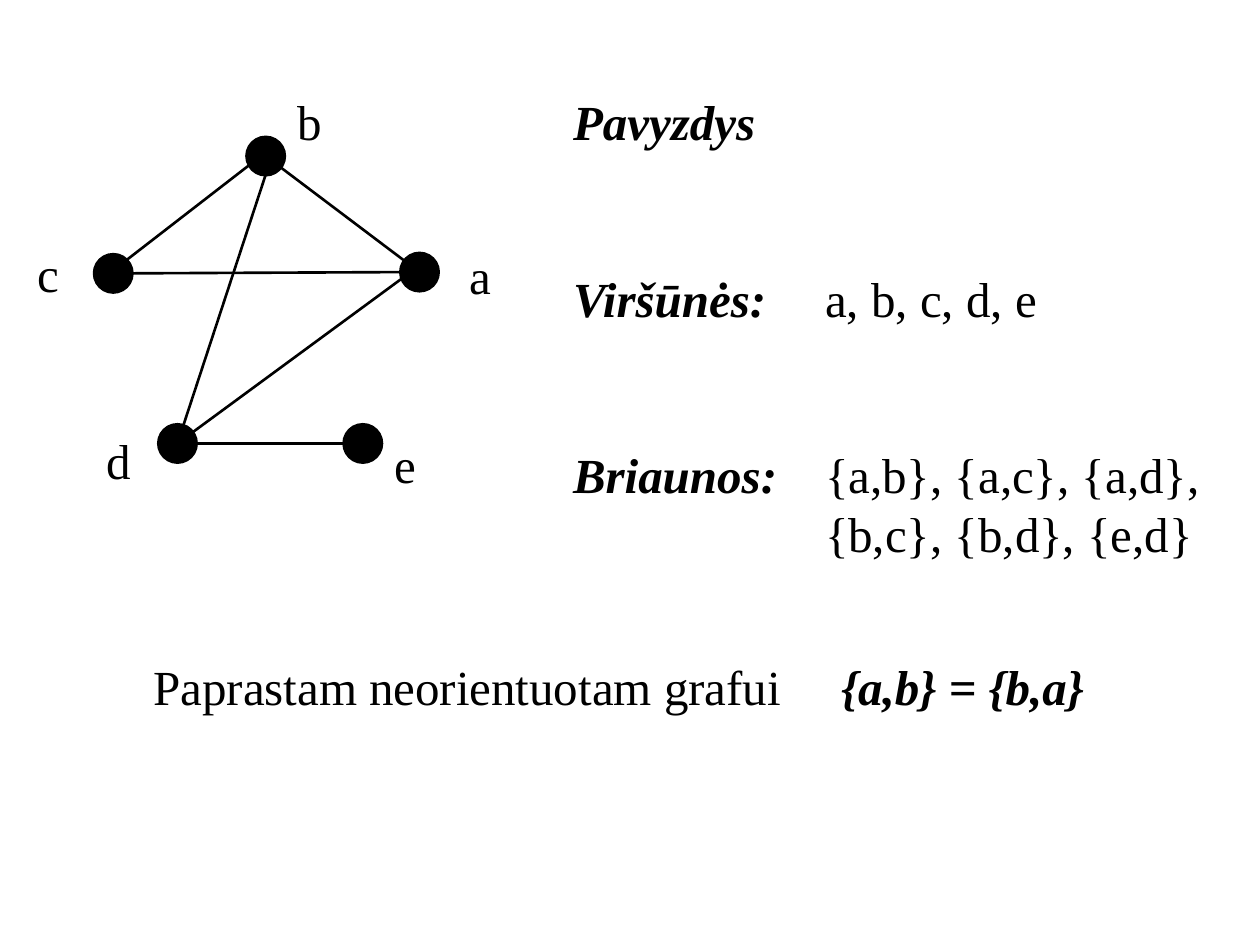
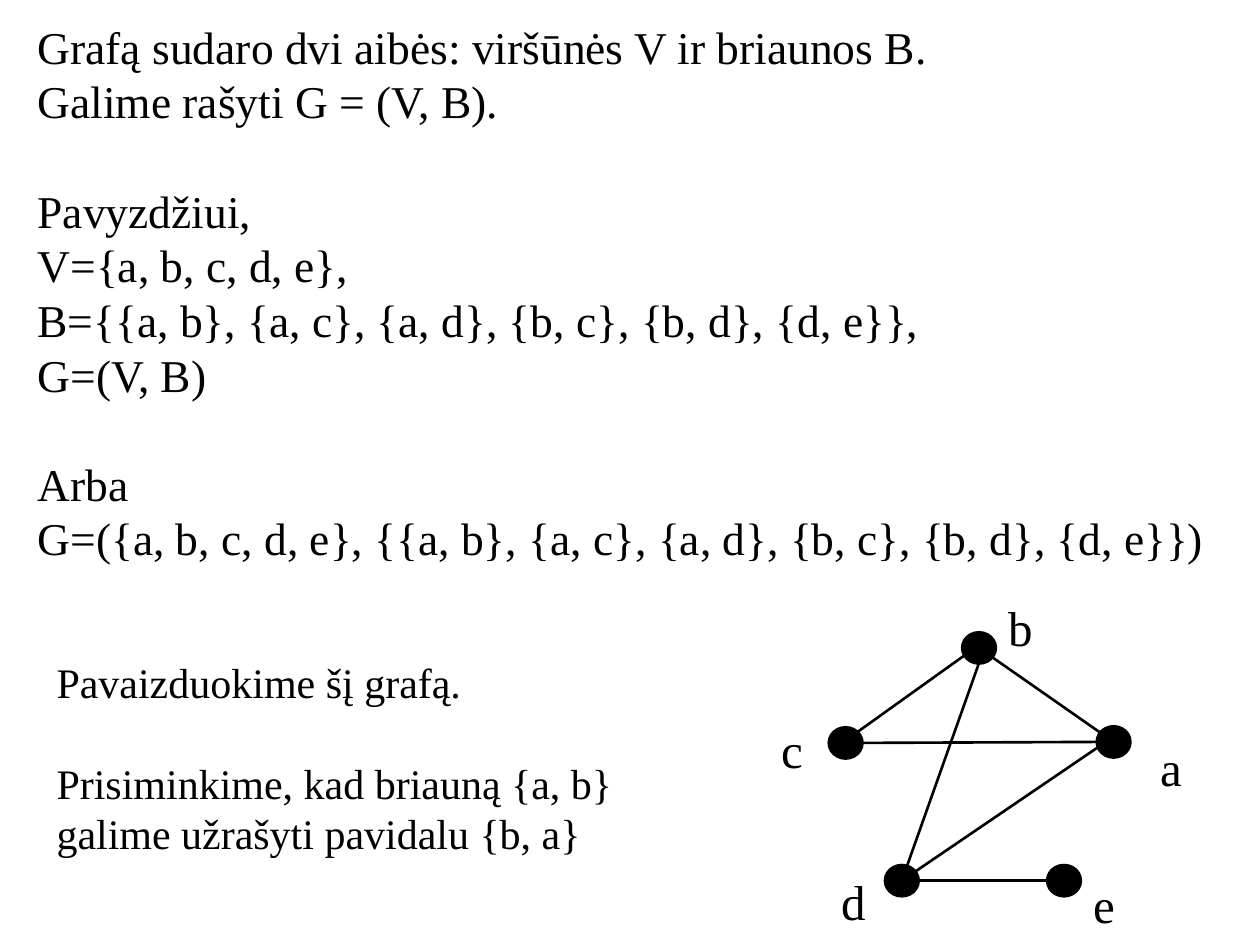
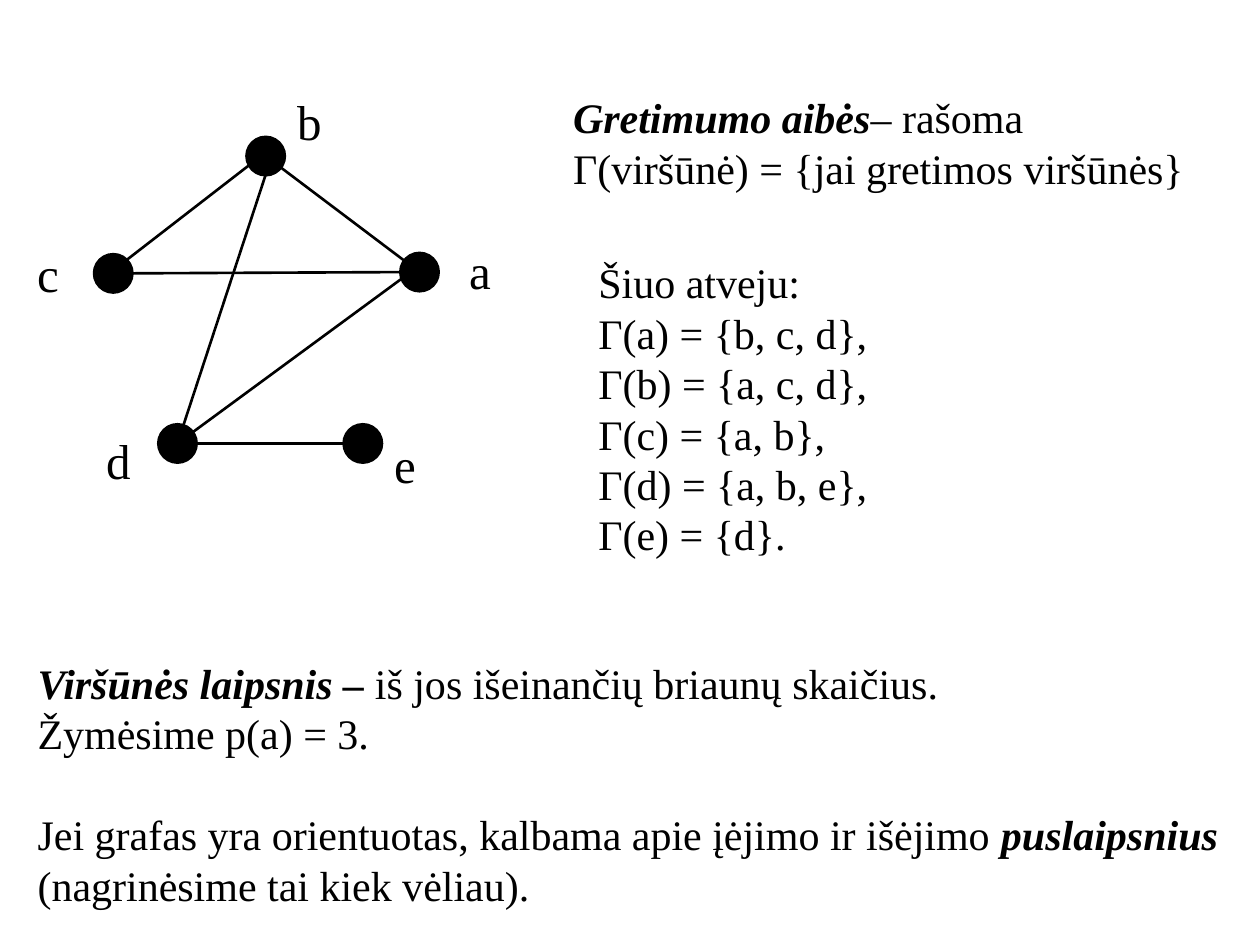
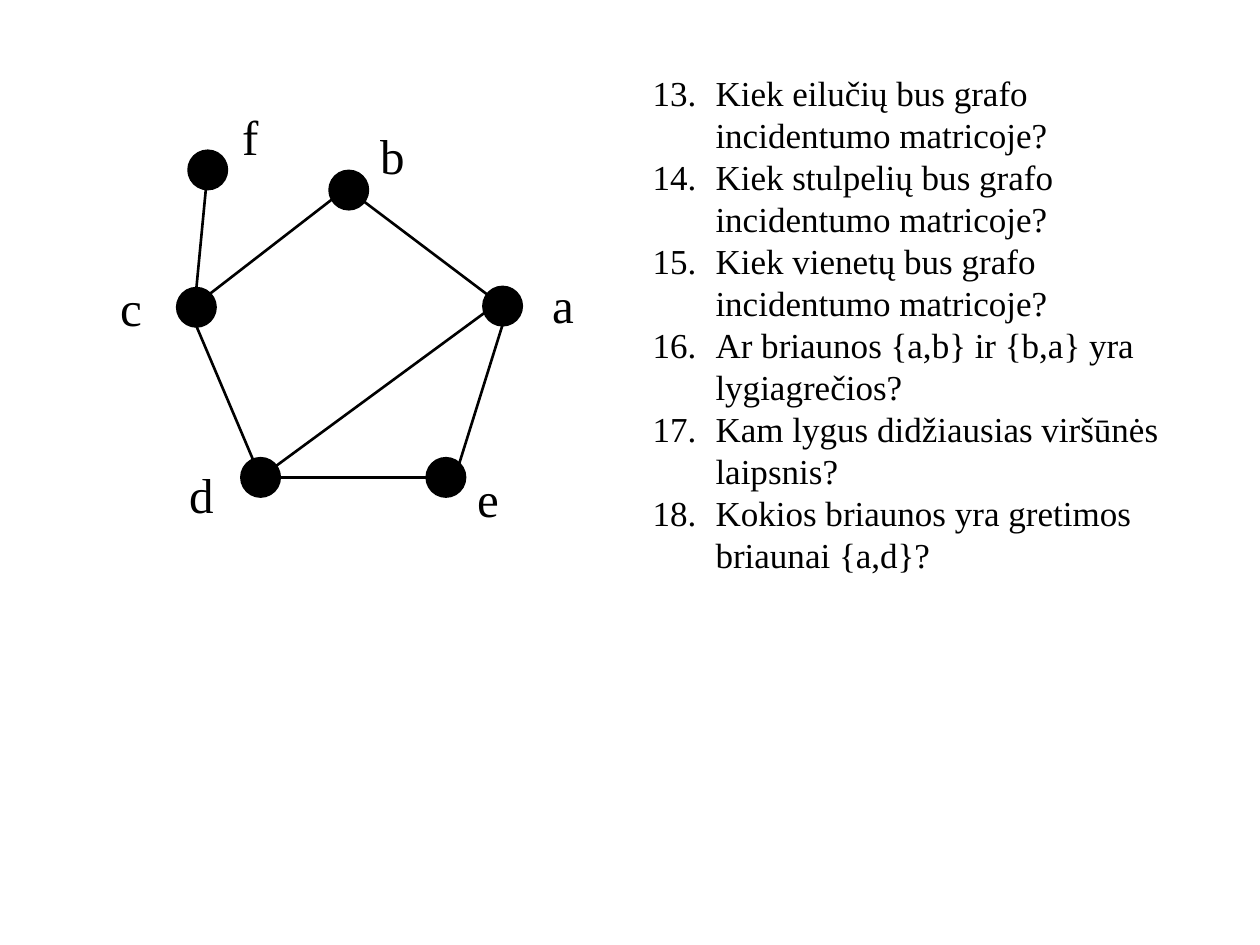
from lxml.etree import SubElement
from pptx import Presentation
from pptx.dml.color import RGBColor
from pptx.enum.shapes import MSO_CONNECTOR as CONN, MSO_SHAPE as SHAPE
from pptx.enum.text import MSO_AUTO_SIZE as FIT
from pptx.oxml.ns import qn
from pptx.util import Pt

BLACK = RGBColor(0x00, 0x00, 0x00)
WHITE = RGBColor(0xFF, 0xFF, 0xFF)
FONT = "Times New Roman"
LINE = 1.2
NODE = 21.4

NODES = {"a": (214.6, 95.8), "b": (126.7, 29.5), "c": (39.6, 96.5),
         "d": (76.3, 193.7), "e": (182.2, 193.7)}
LABELS = {"a": (247, 87.8), "b": (148.3, 0), "c": (0, 86.4),
          "d": (39.6, 193.7), "e": (203.8, 195.8)}
SHARED_EDGES = [("b", 0, 0, "a", 0, 0), ("d", -0.3, 0, "e", -1, 0),
                ("c", 0.7, -0.7, "b", -0.25, 0), ("a", -0.2, -0.2, "d", 0, 0)]
EDGES = SHARED_EDGES + [("c", 1, 0, "a", -1, 0), ("b", 0, 1, "d", 0, 0)]
EDGES_F = SHARED_EDGES + [("e", 0.7, -0.7, "a", 0, 1), ("c", 0, 1, "d", 0, 0),
                          ("f", 0, 0, "c", 0, -1)]


def add_text(shapes, box, size, lines, gaps={}, tab=None, start=None):
    """Write lines into a box; *stars* mark bold italic, gaps count skipped lines."""
    tb = shapes.add_textbox(*[Pt(v) for v in box])
    tf = tb.text_frame
    tf.word_wrap = True
    tf.auto_size = FIT.SHAPE_TO_FIT_TEXT
    for i, line in enumerate(lines):
        p = tf.paragraphs[0] if i == 0 else tf.add_paragraph()
        p.line_spacing = Pt(size * LINE)
        p.space_before = Pt(size * LINE * gaps.get(i, 0))
        pPr = p._p.get_or_add_pPr()
        if start:
            pPr.set("marL", str(Pt(36)))
            pPr.set("indent", str(Pt(-36)))
            SubElement(pPr, qn("a:buAutoNum"), type="arabicPeriod", startAt=str(start))
        if tab:
            tabs = SubElement(pPr, qn("a:tabLst"))
            SubElement(tabs, qn("a:tab"), pos=str(Pt(tab)), algn="l")
        for j, part in enumerate(line.split("*")):
            if part:
                r = p.add_run()
                r.text = part
                r.font.name, r.font.size = FONT, Pt(size)
                r.font.color.rgb = BLACK
                r.font.bold = r.font.italic = j % 2 == 1


def add_graph(s, x, y, nodes=NODES, labels=LABELS, edges=EDGES, sx=1, sy=1):
    """Draw vertices, labels and edges from the corner x, y, scaled by sx, sy."""
    shapes = s.shapes.add_group_shape().shapes

    def place(px, py):
        """Turn a point of the graph into a point of the slide."""
        return Pt(x + px * sx), Pt(y + py * sy)

    def anchor(name, dx, dy):
        """Find a point of a vertex, dx and dy radii from its centre."""
        left, top = nodes[name]
        return place(left + NODE / 2 * (1 + dx), top + NODE / 2 * (1 + dy))

    for pos in nodes.values():
        sp = shapes.add_shape(SHAPE.OVAL, *place(*pos), Pt(NODE * sx), Pt(NODE * sy))
        sp.shadow.inherit = False
        sp.fill.solid()
        sp.fill.fore_color.rgb = BLACK
        sp.line.color.rgb = BLACK
        sp.line.width = Pt(2)
    for name, (lx, ly) in labels.items():
        add_text(shapes, (x + lx * sx, y + ly * sy, 26.6 * sx, 39.6 * sy), 28, [name])
    for edge in edges:
        cn = shapes.add_connector(CONN.STRAIGHT, *anchor(*edge[:3]), *anchor(*edge[3:]))
        cn.line.color.rgb = BLACK
        cn.line.width = Pt(1.5)
        SubElement(cn._element.spPr, qn("a:effectLst"))


def example_slide(s):
    """Show the graph with its vertices and edges listed."""
    add_graph(s, 14.4, 49)
    add_text(s.shapes, (320.4, 49, 380, 278.6), 28, [
        "*Pavyzdys*",
        "*Viršūnės:*\ta, b, c, d, e",
        "*Briaunos:*\t{a,b}, {a,c}, {a,d},",
        "\t{b,c}, {b,d}, {e,d}",
    ], gaps={1: 2, 2: 2}, tab=144)
    add_text(s.shapes, (80.6, 371.5, 551.5, 41), 28,
             ["Paprastam neorientuotam grafui\t*{a,b} = {b,a}*"], tab=393)


def sets_slide(s):
    """Define the graph by its two sets and draw it small."""
    add_text(s.shapes, (14.4, 7.2, 705.6, 322.6), 26, [
        "Grafą sudaro dvi aibės: viršūnės V ir briaunos B.",
        "Galime rašyti G = (V, B).",
        "Pavyzdžiui,",
        "V={a, b, c, d, e},",
        "B={{a, b}, {a, c}, {a, d}, {b, c}, {b, d}, {d, e}},",
        "G=(V, B)",
        "Arba",
        "G=({a, b, c, d, e}, {{a, b}, {a, c}, {a, d}, {b, c}, {b, d}, {d, e}})",
    ], gaps={2: 1, 6: 1})
    add_graph(s, 439.2, 337.7, labels=LABELS | {"a": (247.7, 98.7)}, sx=0.875, sy=0.81)
    add_text(s.shapes, (25.2, 371.5, 360.7, 123.8), 24, [
        "Pavaizduokime šį grafą.",
        "Prisiminkime, kad briauną {a, b} galime užrašyti pavidalu {b, a}",
    ], gaps={1: 1})


def adjacency_slide(s):
    """Show the graph with adjacency sets and vertex degree."""
    add_graph(s, 14.4, 49, labels=LABELS | {"a": (247, 85)})
    add_text(s.shapes, (320.4, 49, 380, 65.5), 24, [
        "*Gretimumo aibės*– rašoma",
        "Γ(viršūnė) = {jai gretimos viršūnės}",
    ])
    add_text(s.shapes, (334.8, 143.3, 351.4, 181.4), 24, [
        "Šiuo atveju:",
        "Γ(a) = {b, c, d},",
        "Γ(b) = {a, c, d},",
        "Γ(c) = {a, b},",
        "Γ(d) = {a, b, e},",
        "Γ(e) = {d}.",
    ])
    add_text(s.shapes, (14.4, 372.2, 692, 152.6), 24, [
        "*Viršūnės laipsnis – *iš jos išeinančių briaunų skaičius.",
        "Žymėsime p(a) = 3.",
        "Jei grafas yra orientuotas, kalbama apie įėjimo ir išėjimo "
        "*puslaipsnius *(nagrinėsime tai kiek vėliau).",
    ], gaps={2: 1})


def questions_slide(s):
    """Ask numbered questions about a graph of six vertices."""
    add_text(s.shapes, (365.8, 37.4, 311.8, 298), 20, [
        "Kiek eilučių bus grafo incidentumo matricoje?",
        "Kiek stulpelių bus grafo incidentumo matricoje?",
        "Kiek vienetų bus grafo incidentumo matricoje?",
        "Ar briaunos {a,b} ir {b,a} yra lygiagrečios?",
        "Kam lygus didžiausias viršūnės laipsnis?",
        "Kokios briaunos yra gretimos briaunai {a,d}?",
    ], start=13)
    add_graph(s, 61.9, 68.4, nodes=NODES | {"f": (46.1, 18)},
              labels=LABELS | {"a": (247, 85), "f": (69.8, -10.8)}, edges=EDGES_F)


def main():
    """Build the four slides and save them."""
    prs = Presentation()
    prs.slide_width, prs.slide_height = Pt(720), Pt(540)
    for build in (example_slide, sets_slide, adjacency_slide, questions_slide):
        s = prs.slides.add_slide(prs.slide_layouts[6])
        s.background.fill.solid()
        s.background.fill.fore_color.rgb = WHITE
        build(s)
    prs.save("out.pptx")


if __name__ == "__main__":
    main()
